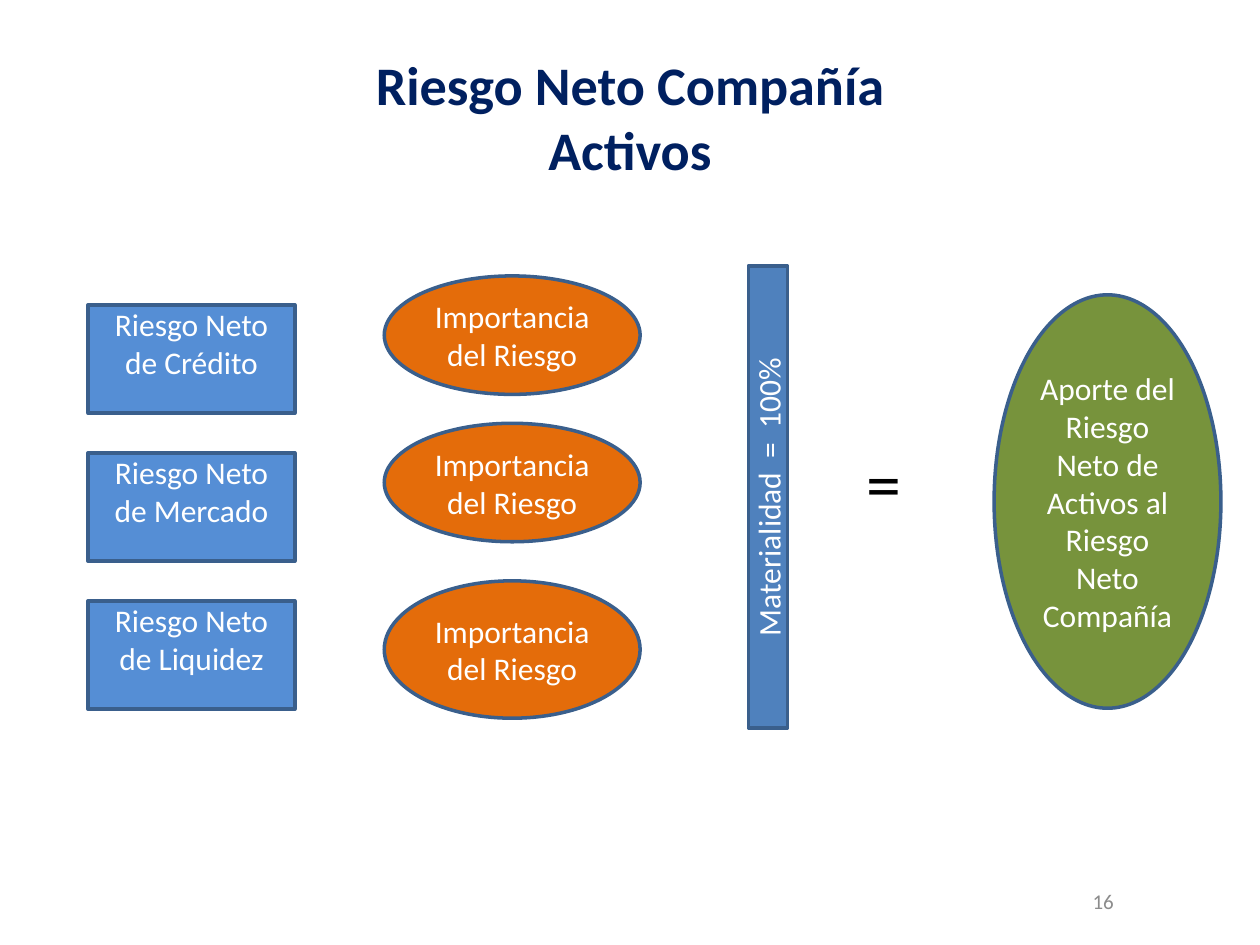
from pptx import Presentation
from pptx.dml.color import RGBColor
from pptx.enum.shapes import MSO_SHAPE
from pptx.enum.text import MSO_ANCHOR, PP_ALIGN
from pptx.util import Pt

RECT, OVAL = MSO_SHAPE.RECTANGLE, MSO_SHAPE.OVAL
TOP, MIDDLE = MSO_ANCHOR.TOP, MSO_ANCHOR.MIDDLE
LEFT, CENTER, RIGHT = PP_ALIGN.LEFT, PP_ALIGN.CENTER, PP_ALIGN.RIGHT

THEME = {
    "font": "Calibri",
    "title": "002060", "page": "8C8C8C", "sign": "000000", "label": "FFFFFF",
    "risk": "558ED5", "weight": "E46C0A", "bar": "4F81BD", "result": "77933C",
    "edge": "3A5F8C",
    "title_size": 31, "page_size": 12, "sign_size": 40, "label_size": 18,
}

TITLE = "Riesgo Neto Compañía\vActivos"
PAGE = "16"
RISKS = ["Riesgo Neto de Crédito", "Riesgo Neto de Mercado", "Riesgo Neto de Liquidez"]
WEIGHT = "Importancia del Riesgo"
WEIGHT_ROWS = [(157.7, 67.7), (241.9, 67.7), (331.9, 78.5)]  # top, height
BAR = "Materialidad  =  100%"
RESULT = "Aporte del Riesgo Neto de Activos al Riesgo Neto Compañía"

RISK_TOP, RISK_STEP = 174.2, 84.6


def write(shape, text, role, align=CENTER, anchor=MIDDLE, wrap=True, bold=False):
    frame = shape.text_frame
    frame.word_wrap = wrap
    frame.vertical_anchor = anchor
    para = frame.paragraphs[0]
    para.text = text
    para.alignment = align
    form = {"name": THEME["font"], "size": Pt(THEME[role + "_size"]), "bold": bold}
    for run in para.runs:
        for key, value in form.items():
            setattr(run.font, key, value)
        run.font.color.rgb = RGBColor.from_string(THEME[role])


def add_text(slide, box, text, role, **form):
    shape = slide.shapes.add_textbox(*map(Pt, box))
    write(shape, text, role, **form)


def add_block(slide, kind, box, text, fill, **form):
    shape = slide.shapes.add_shape(kind, *map(Pt, box))
    shape.shadow.inherit = False
    shape.fill.solid()
    shape.fill.fore_color.rgb = RGBColor.from_string(THEME[fill])
    shape.line.color.rgb = RGBColor.from_string(THEME["edge"])
    shape.line.width = Pt(2)
    write(shape, text, "label", **form)
    return shape


def main():
    deck = Presentation()
    deck.slide_width, deck.slide_height = Pt(720), Pt(540)
    slide = deck.slides.add_slide(deck.slide_layouts[6])

    add_text(slide, (36, 21.6, 648, 90), TITLE, "title", bold=True)
    add_text(slide, (516.2, 500.4, 127.4, 28.8), PAGE, "page", align=RIGHT)

    for row, (risk, (top, height)) in enumerate(zip(RISKS, WEIGHT_ROWS)):
        box = (50.4, RISK_TOP + row * RISK_STEP, 118.1, 61.9)
        block = add_block(slide, RECT, box, risk, "risk", anchor=TOP)
        block.text_frame.margin_top = 0
        add_block(slide, OVAL, (219.6, top, 146.2, height), WEIGHT, "weight")

    bar = add_block(slide, RECT, (427.7, 151.9, 22.3, 264.2), BAR, "bar")
    bar.text_frame._txBody.bodyPr.set("vert", "vert270")
    add_text(slide, (488.2, 247.7, 34.6, 55.4), "=", "sign",
             align=LEFT, anchor=TOP, wrap=False)
    add_block(slide, OVAL, (568.1, 168.5, 129.6, 236.2), RESULT, "result")

    deck.save("out.pptx")


if __name__ == "__main__":
    main()
